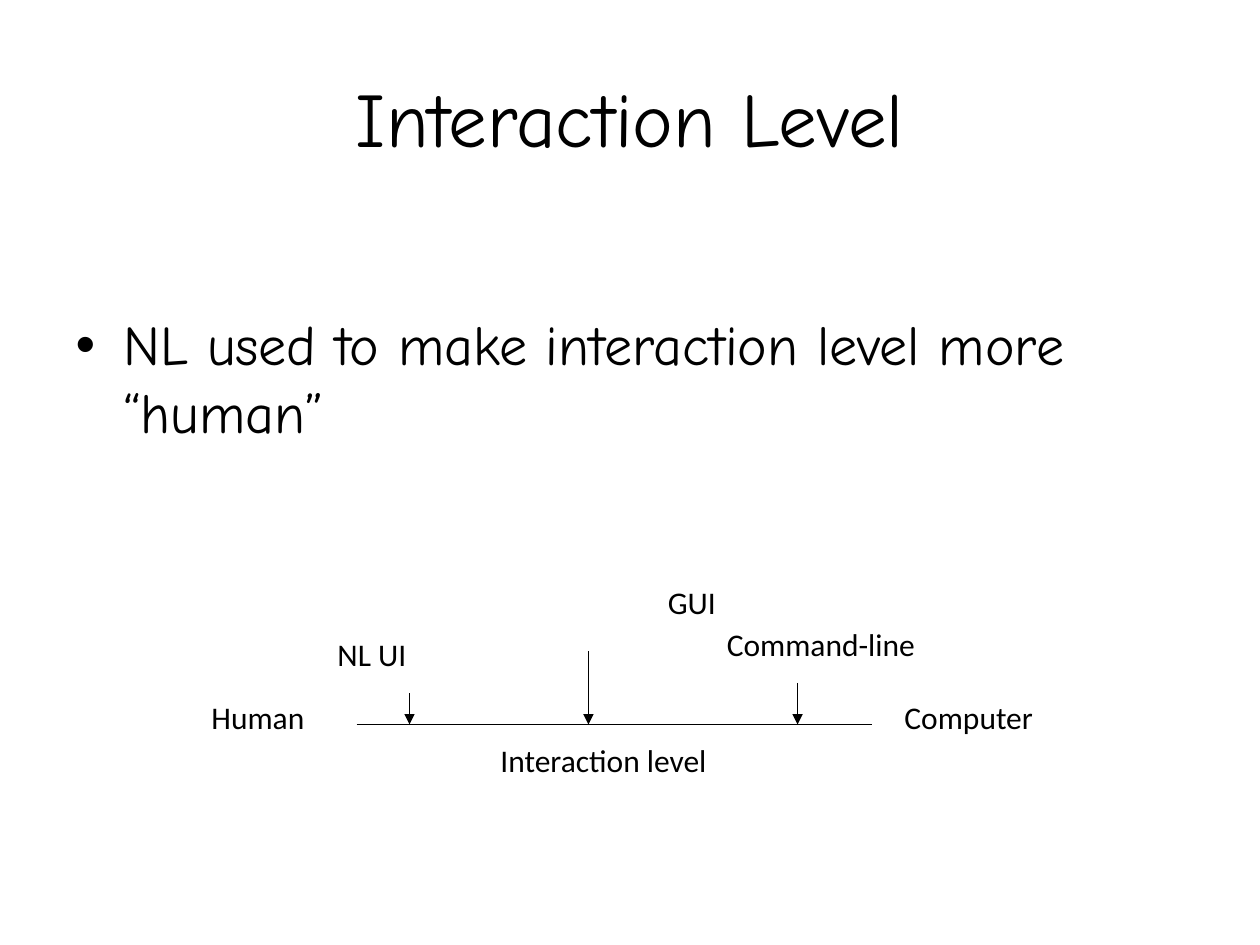
import dataclasses

import pptx
import pptx.dml.color
import pptx.enum.shapes
import pptx.enum.text
import pptx.oxml
import pptx.oxml.ns
import pptx.util

Inches = pptx.util.Inches
Pt = pptx.util.Pt
ALIGN = pptx.enum.text.PP_ALIGN
ANCHOR = pptx.enum.text.MSO_ANCHOR

INK = "000000"
AXIS = 5.75  # height of the interaction scale


@dataclasses.dataclass
class Label:
    text: str
    left: float
    top: float
    width: float
    align: ALIGN = ALIGN.LEFT


@dataclasses.dataclass
class Arrow:
    x: float
    top: float


LABELS = [
    Label("Human", 1.58, 5.49, 1.23),
    Label("Computer", 7.08, 5.49, 1.69),
    Label("Command-line", 5.67, 4.91, 2.32),
    Label("NL UI", 2.58, 4.99, 1.18),
    Label("GUI", 4.23, 4.58, 1.55, ALIGN.RIGHT),
    Label("Interaction level", 3.33, 5.83, 2.92, ALIGN.CENTER),
]
ARROWS = [Arrow(3.25, 5.5), Arrow(4.67, 5.17), Arrow(6.33, 5.42)]


def color(code: str) -> pptx.dml.color.RGBColor:
    return pptx.dml.color.RGBColor.from_string(code)


def place(shape, left: float, top: float, width: float, height: float) -> None:
    shape.left, shape.top = Inches(left), Inches(top)
    shape.width, shape.height = Inches(width), Inches(height)


def write(shape, text: str, *, size: float, font: str = "Comic Neue",
          align: ALIGN = ALIGN.LEFT, anchor: ANCHOR = ANCHOR.TOP):
    frame = shape.text_frame
    frame.word_wrap = True
    frame.auto_size = pptx.enum.text.MSO_AUTO_SIZE.NONE
    frame.vertical_anchor = anchor
    para = frame.paragraphs[0]
    para.alignment = align
    para.space_before = Pt(0)
    run = para.add_run()
    run.text = text
    run.font.size = Pt(size)
    run.font.name = font
    run.font.color.rgb = color(INK)
    return para


def bullet(para, indent: float) -> None:
    props = para._p.get_or_add_pPr()
    props.set("marL", str(Inches(indent)))
    props.set("indent", str(-Inches(indent)))
    mark = pptx.oxml.parse_xml(
        f'<a:buChar {pptx.oxml.ns.nsdecls("a")} char="•"/>')
    props.append(mark)


def rule(shapes, x1: float, y1: float, x2: float, y2: float,
         head: bool = False) -> None:
    line = shapes.add_connector(
        pptx.enum.shapes.MSO_CONNECTOR.STRAIGHT,
        Inches(x1), Inches(y1), Inches(x2), Inches(y2))
    line.line.color.rgb = color(INK)
    line.line.width = Pt(0.75)
    names = pptx.oxml.ns.nsdecls("a")
    if head:
        line.line._get_or_add_ln().append(
            pptx.oxml.parse_xml(f'<a:tailEnd {names} type="triangle"/>'))
    line._element.spPr.append(pptx.oxml.parse_xml(f"<a:effectLst {names}/>"))


def tag(shapes, label: Label) -> None:
    box = shapes.add_textbox(0, 0, 0, 0)
    place(box, label.left, label.top, label.width, 0.5)
    write(box, label.text, size=18, font="Calibri", align=label.align)


def main() -> None:
    deck = pptx.Presentation()
    deck.slide_width, deck.slide_height = Inches(10), Inches(7.5)
    slide = deck.slides.add_slide(deck.slide_layouts[1])

    # Title and bullet
    title, body = slide.placeholders
    place(title, 0.5, 0.3, 9, 1.25)
    write(title, "Interaction Level", size=44, align=ALIGN.CENTER,
          anchor=ANCHOR.MIDDLE)
    place(body, 0.5, 1.75, 9, 4.95)
    para = write(body, "NL used to make interaction level more “human”",
                 size=32)
    bullet(para, 0.38)
    body.text_frame.margin_top = Inches(0.71)

    # Scale from human to computer
    scale = slide.shapes.add_group_shape().shapes
    rule(scale, 2.83, AXIS, 6.92, AXIS)
    for arrow in ARROWS:
        rule(scale, arrow.x, arrow.top, arrow.x, AXIS, head=True)
    for label in LABELS:
        tag(scale, label)

    deck.save("out.pptx")


if __name__ == "__main__":
    main()
